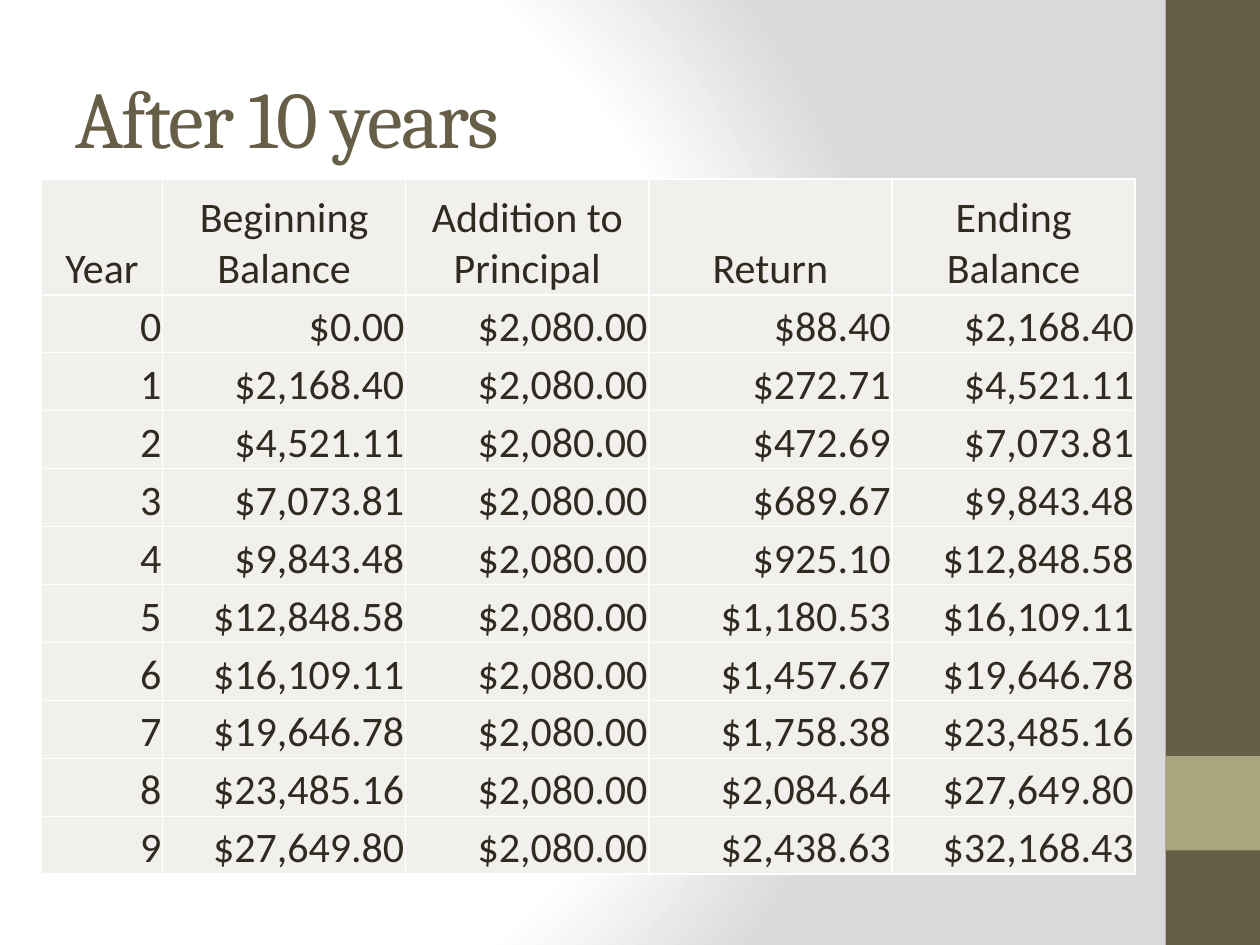
from pptx import Presentation
from pptx.dml.color import RGBColor
from pptx.enum.shapes import MSO_SHAPE as Shape
from pptx.enum.text import MSO_ANCHOR as Anchor, PP_ALIGN as Align
from pptx.oxml import parse_xml
from pptx.oxml.ns import nsdecls
from pptx.util import Inches, Pt

TITLE = "After 10 years"
HEADINGS = ["Year", "Beginning Balance", "Addition to Principal", "Return", "Ending Balance"]
ADDITION = "$2,080.00"
RETURNS = ["$88.40", "$272.71", "$472.69", "$689.67", "$925.10",
           "$1,180.53", "$1,457.67", "$1,758.38", "$2,084.64", "$2,438.63"]
ENDINGS = ["$2,168.40", "$4,521.11", "$7,073.81", "$9,843.48", "$12,848.58",
           "$16,109.11", "$19,646.78", "$23,485.16", "$27,649.80", "$32,168.43"]
BEGINNINGS = ["$0.00"] + ENDINGS[:-1]
SIDEBAR = [(0, 7.5, "675E47"), (6, 0.75, "A9A57C")]
GRADIENT = [(0, "FFFFFF"), (75, "FFFFFF"), (100, "DADADA")]
COLUMN_WIDTHS = [0.96] + [1.93] * 4
ROW_HEIGHTS = [0.92] + [0.46] * len(RETURNS)


def color(value):
    return RGBColor.from_string(value)


def style(para, font, size, value):
    for span in para.runs:
        span.font.name = font
        span.font.size = Pt(size)
        span.font.color.rgb = color(value)


def add_background(page):
    stops = "".join(f'<a:gs pos="{place * 1000}"><a:srgbClr val="{value}"/></a:gs>'
                    for place, value in GRADIENT)
    page.element.cSld.insert(0, parse_xml(
        f'<p:bg {nsdecls("p", "a")}><p:bgPr><a:gradFill rotWithShape="1">'
        f'<a:gsLst>{stops}</a:gsLst><a:path path="circle">'
        '<a:fillToRect l="20000" t="50000" r="100000" b="50000"/></a:path>'
        '</a:gradFill><a:effectLst/></p:bgPr></p:bg>'))


def add_sidebar(page):
    for top, height, value in SIDEBAR:
        bar = page.shapes.add_shape(
            Shape.RECTANGLE, Inches(9.25), Inches(top), Inches(0.75), Inches(height))
        bar.shadow.inherit = False
        bar.fill.solid()
        bar.fill.fore_color.rgb = color(value)
        bar.line.fill.background()


def add_title(page):
    box = page.shapes.add_textbox(Inches(0.5), Inches(0.3), Inches(8.33), Inches(1.25))
    frame = box.text_frame
    frame.word_wrap = True
    frame.vertical_anchor = Anchor.MIDDLE
    frame.text = TITLE
    para = frame.paragraphs[0]
    style(para, "Cambria", 46, "675E47")
    para.runs[0].font._element.set("spc", "-100")


def format_cell(cell, text, align):
    cell.text = text
    cell.vertical_anchor = Anchor.BOTTOM
    cell.margin_left = cell.margin_right = cell.margin_top = Inches(0.01)
    cell.margin_bottom = 0
    cell.fill.solid()
    cell.fill.fore_color.rgb = color("F1F0EC")
    para = cell.text_frame.paragraphs[0]
    para.alignment = align
    style(para, "Calibri", 24, "2F2B20")
    properties = cell._tc.get_or_add_tcPr()
    for index, side in enumerate("LRTB"):
        properties.insert(index, parse_xml(
            f'<a:ln{side} {nsdecls("a")} w="{Pt(1)}"><a:solidFill>'
            f'<a:srgbClr val="FFFFFF"/></a:solidFill></a:ln{side}>'))


def add_balances(page):
    years = enumerate(zip(BEGINNINGS, RETURNS, ENDINGS))
    rows = [HEADINGS] + [[str(year), beginning, ADDITION, gain, ending]
                         for year, (beginning, gain, ending) in years]
    table = page.shapes.add_table(
        len(rows), len(HEADINGS), Inches(0.33), Inches(1.42),
        Inches(sum(COLUMN_WIDTHS)), Inches(sum(ROW_HEIGHTS))).table
    for column, width in zip(table.columns, COLUMN_WIDTHS):
        column.width = Inches(width)
    for row, height, texts in zip(table.rows, ROW_HEIGHTS, rows):
        row.height = Inches(height)
        align = Align.CENTER if texts is HEADINGS else Align.RIGHT
        for cell, text in zip(row.cells, texts):
            format_cell(cell, text, align)


def main():
    """Build the ten-year savings balance slide."""
    deck = Presentation()
    deck.slide_width, deck.slide_height = Inches(10), Inches(7.5)
    page = deck.slides.add_slide(deck.slide_layouts[6])
    add_background(page)
    add_sidebar(page)
    add_title(page)
    add_balances(page)
    deck.save("out.pptx")


if __name__ == "__main__":
    main()
